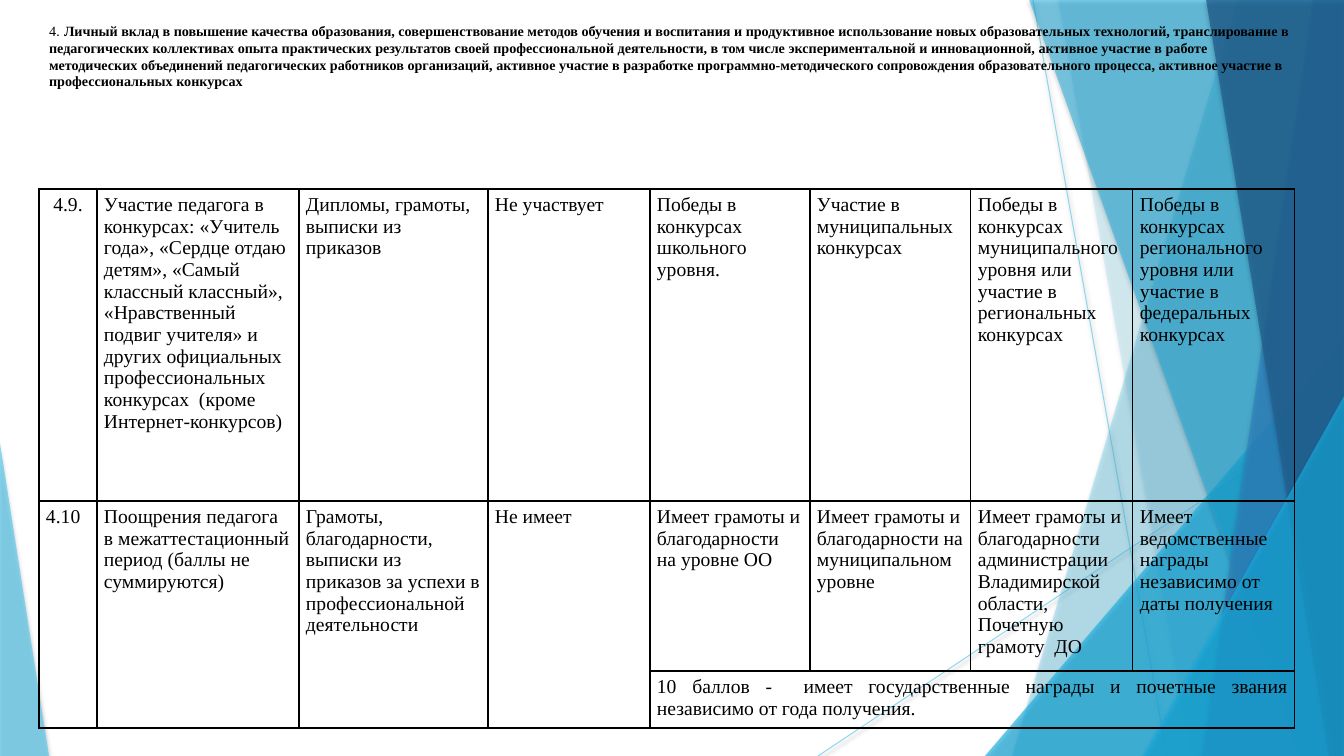
import pptx
import pptx.util
import pptx.dml.color
import pptx.enum.shapes
import pptx.enum.text
import pptx.oxml
import pptx.oxml.ns

PX = 914400 / 100.8
W, H = 1344, 756
FONT = "Times New Roman"
COLORS = {"text": "000000", "sky": "5FCBEF", "cyan": "17B0E4", "blue": "2E83C3", "navy": "226292"}
ALIGN = pptx.enum.text.PP_ALIGN
NS = pptx.oxml.ns.nsdecls("a")

FACETS = [
    ([(1238, -1), (W, -1), (W, H), (1012, H)], "sky", 36),
    ([(1058, -1), (W, -1), (W, H), (1191, H)], "sky", 20),
    ((985, 336, 359, 420, 1), "cyan", 66),
    ([(1029, -1), (W, -1), (W, H), (1301, H)], "cyan", 50),
    ([(1313, -1), (W, -1), (W, H), (1202, H)], "blue", 70),
    ([(1206, -1), (W, -1), (W, H), (1329, H)], "navy", 80),
    ((1143, 396, 201, 360, 1), "cyan", 66),
    ((0, 443, 49, 313, 0), "sky", 70),
]
RAYS = [(1033, 0, 1167, H), (W, 406, 818, H)]

TITLE = [
    ("4", FONT, False),
    (". ", "Arial", False),
    ("Личный вклад в повышение качества образования, совершенствование методов обучения и воспитания "
     "и продуктивное использование новых образовательных технологий, транслирование в педагогических "
     "коллективах опыта практических результатов своей профессиональной деятельности, в том числе "
     "экспериментальной и инновационной, активное участие в работе методических объединений "
     "педагогических работников организаций, активное участие в разработке программно-методического "
     "сопровождения образовательного процесса, активное участие в профессиональных конкурсах", FONT, True),
]
COLS = [58, 202, 189, 162, 160, 161, 162, 162]
ROWS = [312, 170, 57]
CELLS = [
    ["4.9.",
     "Участие педагога в конкурсах: «Учитель года», «Сердце отдаю детям», «Самый классный классный», "
     "«Нравственный подвиг учителя» и других официальных профессиональных конкурсах  "
     "(кроме Интернет-конкурсов)",
     "Дипломы, грамоты, выписки из приказов",
     "Не участвует",
     "Победы в конкурсах школьного уровня.",
     "Участие в муниципальных конкурсах",
     "Победы в конкурсах муниципального уровня или участие в региональных конкурсах",
     "Победы в конкурсах регионального уровня или участие в федеральных конкурсах"],
    ["4.10",
     "Поощрения педагога в межаттестационный период (баллы не суммируются)",
     "Грамоты, благодарности, выписки из приказов за успехи в профессиональной деятельности",
     "Не имеет",
     "Имеет грамоты и благодарности на уровне ОО",
     "Имеет грамоты и благодарности на муниципальном уровне",
     "Имеет грамоты и благодарности администрации Владимирской области, Почетную грамоту  ДО",
     "Имеет ведомственные награды  независимо от даты получения"],
    ["", "", "", "",
     "10 баллов -  имеет государственные награды и почетные звания независимо от года получения.",
     "", "", ""],
]
ALIGNED = {(0, 0): ALIGN.CENTER, (2, 4): ALIGN.JUSTIFY}


def px(n):
    """Turn pixels into EMU."""
    return pptx.util.Emu(round(n * PX))


def rgb(name):
    """Look up a named colour."""
    return pptx.dml.color.RGBColor.from_string(COLORS[name])


def set_alpha(color_format, percent):
    """Make a solid fill colour partly transparent."""
    clr = color_format._xFill.find(pptx.oxml.ns.qn("a:solidFill") + "/*")
    if clr is None:
        clr = color_format._xPr.find(".//" + pptx.oxml.ns.qn("a:srgbClr"))
    clr.append(pptx.oxml.parse_xml(f'<a:alpha {NS} val="{percent * 1000}"/>'))


def paint(el, percent, blur, drop, dark):
    """Set the opacity and the soft shadow of a shape element."""
    sp_pr = el.spPr
    clr = sp_pr.find(".//" + pptx.oxml.ns.qn("a:srgbClr"))
    clr.append(pptx.oxml.parse_xml(f'<a:alpha {NS} val="{percent * 1000}"/>'))
    for old in sp_pr.findall(pptx.oxml.ns.qn("a:effectLst")):
        sp_pr.remove(old)
    sp_pr.append(pptx.oxml.parse_xml(
        f'<a:effectLst {NS}><a:outerShdw blurRad="{pptx.util.Pt(blur)}" dist="{pptx.util.Pt(drop)}" '
        f'dir="5400000" rotWithShape="0"><a:srgbClr val="{COLORS["text"]}">'
        f'<a:alpha val="{dark * 1000}"/></a:srgbClr></a:outerShdw></a:effectLst>'))


def add_backdrop(s):
    """Draw the thin rays and the translucent facets."""
    for ray in RAYS:
        line = s.shapes.add_connector(pptx.enum.shapes.MSO_CONNECTOR.STRAIGHT, *map(px, ray))
        line.line.color.rgb = rgb("sky")
        line.line.width = pptx.util.Pt(0.75)
        paint(line._element, 70, 3.1, 1.6, 38)
    for outline, color, percent in FACETS:
        if isinstance(outline, list):
            builder = s.shapes.build_freeform(*outline[0], scale=PX)
            builder.add_line_segments(outline[1:], close=True)
            sp = builder.convert_to_shape()
        else:
            *box, apex = outline
            sp = s.shapes.add_shape(pptx.enum.shapes.MSO_SHAPE.ISOSCELES_TRIANGLE, *map(px, box))
            sp.adjustments[0] = apex
        sp.fill.solid()
        sp.fill.fore_color.rgb = rgb(color)
        sp.line.fill.background()
        paint(sp._element, percent, 3, 2, 35)


def add_run(p, text, size, font=FONT, bold=False):
    """Add one formatted run to a paragraph."""
    r = p.add_run()
    r.text = text
    r.font.size = pptx.util.Pt(size)
    r.font.name = font
    r.font.bold = bold
    r.font.color.rgb = rgb("text")


def add_title(s, x, y, w, h):
    """Place the heading in the title placeholder."""
    sp = s.shapes.title
    sp.left, sp.top, sp.width, sp.height = map(px, (x, y, w, h))
    tf = sp.text_frame
    tf.word_wrap = True
    tf.auto_size = pptx.enum.text.MSO_AUTO_SIZE.NONE
    tf.vertical_anchor = pptx.enum.text.MSO_ANCHOR.TOP
    p = tf.paragraphs[0]
    p.alignment = ALIGN.LEFT
    for text, font, bold in TITLE:
        add_run(p, text, 10.1, font, bold)
    s.shapes._spTree.append(sp._element)


def add_borders(cell):
    """Give a cell a thin dark line on every side."""
    tc_pr = cell._tc.get_or_add_tcPr()
    for i, side in enumerate("LRTB"):
        tc_pr.insert(i, pptx.oxml.parse_xml(
            f'<a:ln{side} {NS} w="{pptx.util.Pt(0.96)}"><a:solidFill>'
            f'<a:srgbClr val="{COLORS["text"]}"/></a:solidFill></a:ln{side}>'))


def add_criteria(s, x, y):
    """Build the table of criteria with its top left corner at x, y."""
    table = s.shapes.add_table(len(ROWS), len(COLS), px(x), px(y), px(sum(COLS)), px(sum(ROWS))).table
    table.first_row = table.horz_banding = False
    for col, width in zip(table.columns, COLS):
        col.width = px(width)
    for row, height in zip(table.rows, ROWS):
        row.height = px(height)
    for c in range(4):
        table.cell(1, c).merge(table.cell(2, c))
    table.cell(2, 4).merge(table.cell(2, 7))
    for i, texts in enumerate(CELLS):
        for j, text in enumerate(texts):
            cell = table.cell(i, j)
            cell.fill.background()
            add_borders(cell)
            cell.margin_left = cell.margin_right = px(7)
            cell.margin_top = cell.margin_bottom = px(5)
            if text:
                p = cell.text_frame.paragraphs[0]
                p.alignment = ALIGNED.get((i, j), ALIGN.LEFT)
                add_run(p, text, 14)


def main():
    """Build the slide and save it."""
    prs = pptx.Presentation()
    prs.slide_width, prs.slide_height = px(W), px(H)
    s = prs.slides.add_slide(prs.slide_layouts[5])
    add_backdrop(s)
    add_title(s, 39, 17, 1266, 145)
    add_criteria(s, 39, 189)
    prs.save("out.pptx")


if __name__ == "__main__":
    main()
